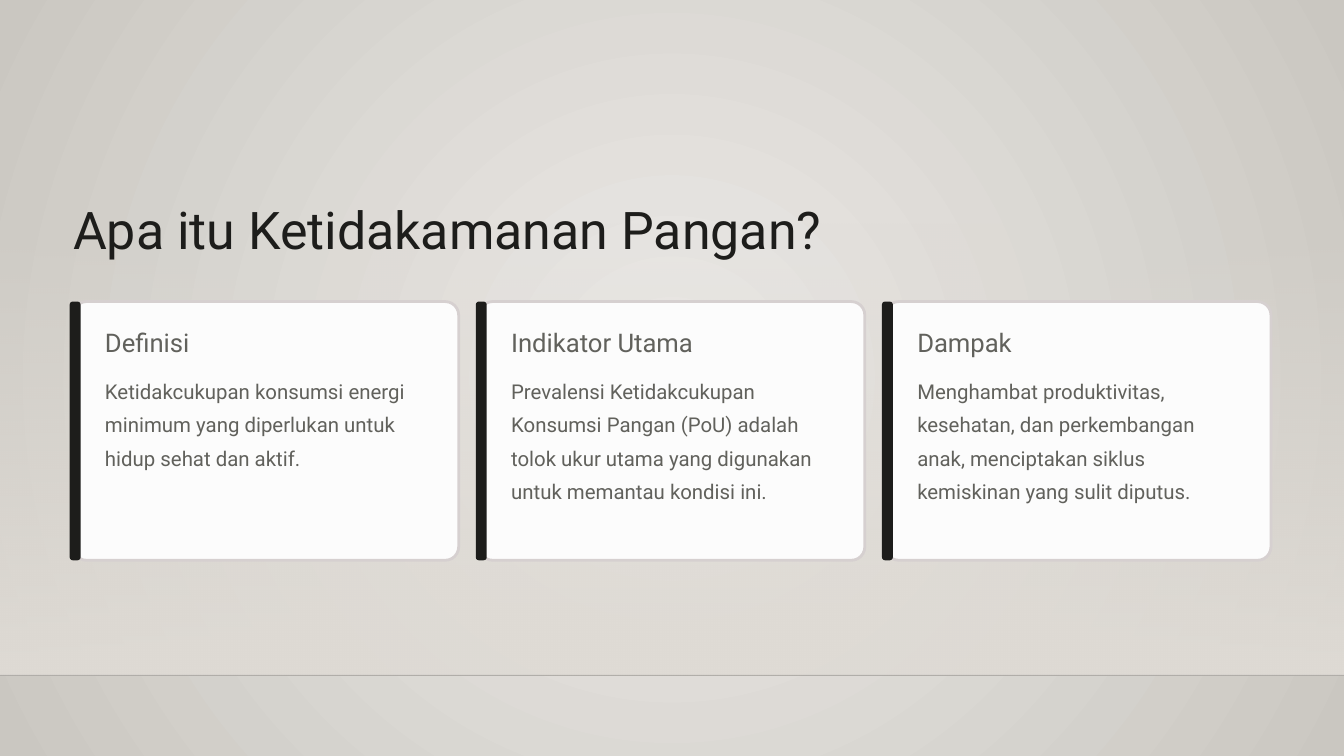
from lxml.etree import SubElement
from pptx import Presentation
from pptx.dml.color import RGBColor
from pptx.enum.shapes import MSO_CONNECTOR as Connector, MSO_SHAPE as Shape
from pptx.oxml.ns import qn
from pptx.util import Inches, Pt

WIDTH, HEIGHT = 16, 9
LEFT = 0.87
COLUMN = 4.835
CARD_TOP, CARD_WIDTH, CARD_HEIGHT = 3.59, 4.59, 3.08
ACCENT_WIDTH, ACCENT_OFFSET = 0.13, 0.04
TEXT_INDENT, TEXT_WIDTH = 0.38, 3.93
FLOOR = 8.04
HAZE_TOP = 2.65

FONT = "Roboto"
INK = RGBColor(0x1D, 0x1D, 0x1B)
GREY = RGBColor(0x61, 0x61, 0x5C)
CARD = RGBColor(0xFC, 0xFC, 0xFC)
CARD_EDGE = RGBColor(0xD6, 0xD0, 0xD0)
CENTRE = RGBColor(0xEC, 0xEA, 0xE7)
RIM = RGBColor(0xCA, 0xC7, 0xC1)
HAZE = RGBColor(0xDF, 0xDB, 0xD5)
RULE = RGBColor(0x00, 0x00, 0x01)

CARDS = [
    ("Definisi",
     "Ketidakcukupan konsumsi energi minimum yang diperlukan untuk hidup sehat dan aktif.",
     1.59),
    ("Indikator Utama",
     "Prevalensi Ketidakcukupan Konsumsi Pangan (PoU) adalah tolok ukur utama "
     "yang digunakan untuk memantau kondisi ini.",
     1.98),
    ("Dampak",
     "Menghambat produktivitas, kesehatan, dan perkembangan anak, menciptakan "
     "siklus kemiskinan yang sulit diputus.",
     1.59),
]


def set_gradient(fill, colours):
    fill.gradient()
    for stop, position, colour in zip(fill.gradient_stops, (0, 1), colours):
        stop.position = position
        stop.color.rgb = colour


def set_alpha(colour_element, percent):
    SubElement(colour_element, qn("a:alpha")).set("val", str(percent * 1000))


def add_background(slide):
    set_gradient(slide.background.fill, (CENTRE, RIM))
    gradient = slide.element.find(".//" + qn("a:gradFill"))
    linear = gradient.find(qn("a:lin"))
    circle = linear.makeelement(qn("a:path"), {"path": "circle"})
    gradient.replace(linear, circle)
    focus = SubElement(circle, qn("a:fillToRect"))
    for side in "ltrb":
        focus.set(side, "50000")


def add_haze(slide):
    haze = slide.shapes.add_shape(Shape.RECTANGLE, 0, Inches(HAZE_TOP),
                                  Inches(WIDTH), Inches(FLOOR - HAZE_TOP))
    haze.shadow.inherit = False
    haze.line.fill.background()
    set_gradient(haze.fill, (HAZE, HAZE))
    haze.fill.gradient_angle = 270
    set_alpha(haze.element.spPr.find(".//" + qn("a:srgbClr")), 0)


def add_floor_line(slide):
    line = slide.shapes.add_connector(Connector.STRAIGHT, 0, Inches(FLOOR),
                                      Inches(WIDTH), Inches(FLOOR))
    line.line.color.rgb = RULE
    line.line.width = Pt(1)
    properties = line.element.spPr
    set_alpha(properties.find(".//" + qn("a:srgbClr")), 20)
    SubElement(properties, qn("a:effectLst"))


def add_text(slide, box, text, size, spacing, colour, wrap=False):
    shape = slide.shapes.add_textbox(*map(Inches, box))
    frame = shape.text_frame
    frame.margin_left = frame.margin_right = frame.margin_top = frame.margin_bottom = 0
    frame.word_wrap = wrap
    frame.text = text
    paragraph = frame.paragraphs[0]
    paragraph.line_spacing = Pt(spacing)
    font = paragraph.runs[0].font
    font.name = FONT
    font.size = Pt(size)
    font.color.rgb = colour


def add_panel(slide, left, width, rounding, colour):
    panel = slide.shapes.add_shape(Shape.ROUNDED_RECTANGLE, Inches(left), Inches(CARD_TOP),
                                   Inches(width), Inches(CARD_HEIGHT))
    panel.adjustments[0] = rounding
    panel.shadow.inherit = False
    panel.fill.solid()
    panel.fill.fore_color.rgb = colour
    panel.line.fill.background()
    return panel


def add_card(slide, left, heading, body, body_height):
    card = add_panel(slide, left, CARD_WIDTH, 0.052, CARD)
    card.line.color.rgb = CARD_EDGE
    card.line.width = Pt(2.4)
    add_panel(slide, left - ACCENT_OFFSET, ACCENT_WIDTH, 0.279, INK)
    text_left = left + TEXT_INDENT
    add_text(slide, (text_left, 3.88, 3.1, 0.39), heading, 22, 27.5, GREY)
    add_text(slide, (text_left, 4.41, TEXT_WIDTH, body_height), body, 17.5, 28.5, GREY, wrap=True)


def main():
    presentation = Presentation()
    presentation.slide_width = Inches(WIDTH)
    presentation.slide_height = Inches(HEIGHT)
    slide = presentation.slides.add_slide(presentation.slide_layouts[6])
    add_background(slide)
    add_haze(slide)
    add_floor_line(slide)
    add_text(slide, (LEFT, 2.32, 10.21, 0.78), "Apa itu Ketidakamanan Pangan?", 44.5, 55.5, INK)
    for index, (heading, body, body_height) in enumerate(CARDS):
        add_card(slide, LEFT + index * COLUMN, heading, body, body_height)
    presentation.save("out.pptx")


if __name__ == "__main__":
    main()
